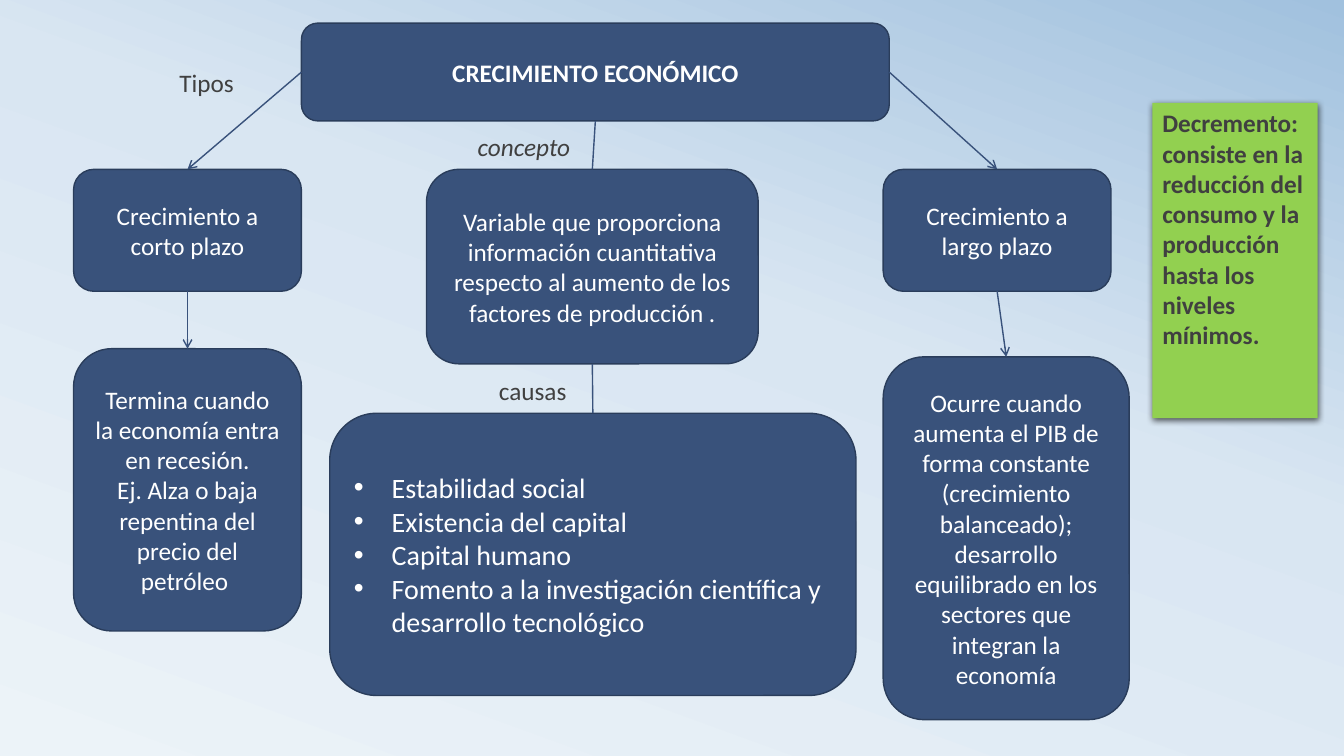
from copy import deepcopy
from dataclasses import dataclass

from lxml import etree
from pptx import Presentation
from pptx.dml.color import RGBColor
from pptx.enum.shapes import MSO_CONNECTOR, MSO_SHAPE
from pptx.enum.text import MSO_ANCHOR, MSO_AUTO_SIZE, PP_ALIGN
from pptx.oxml.ns import qn
from pptx.shapes.autoshape import Shape
from pptx.slide import Slide
from pptx.text.text import TextFrame
from pptx.util import Inches, Pt

ROUND, RECT = MSO_SHAPE.ROUNDED_RECTANGLE, MSO_SHAPE.RECTANGLE
STRAIGHT = MSO_CONNECTOR.STRAIGHT
TOP, MIDDLE = MSO_ANCHOR.TOP, MSO_ANCHOR.MIDDLE
LEFT, CENTER = PP_ALIGN.LEFT, PP_ALIGN.CENTER
FIXED = MSO_AUTO_SIZE.NONE
UP, WEST, DOWN, EAST = range(4)


@dataclass(frozen=True)
class Theme:
    font: str = "Calibri"
    size: int = 18
    large: int = 20
    card: str = "39527B"
    edge: str = "2A3D5B"
    light: str = "FFFFFF"
    dark: str = "404040"
    note: str = "92D050"
    shade: str = "000000"
    sky: tuple[tuple[float, str], ...] = (
        (0, "ECF3F8"), (0.58, "D9E6F2"), (1, "A1C1DE"))


@dataclass(frozen=True)
class Box:
    x: float
    y: float
    w: float
    h: float

    def inset(self, pad: float) -> "Box":
        return Box(self.x + pad, self.y + pad, self.w - 2 * pad, self.h - 2 * pad)

    def lengths(self) -> tuple[int, int, int, int]:
        return Inches(self.x), Inches(self.y), Inches(self.w), Inches(self.h)


@dataclass(frozen=True)
class Card:
    name: str
    box: Box
    lines: tuple[str, ...] = ()


@dataclass(frozen=True)
class Label:
    text: str
    box: Box
    slant: bool = False


@dataclass(frozen=True)
class Link:
    start: str
    side: int
    end: str
    arrow: bool = True


THEME = Theme()
ROW = 1.68
HEAD = "CRECIMIENTO ECONÓMICO"
CAUSES = (
    "Estabilidad social",
    "Existencia del capital",
    "Capital humano",
    "Fomento a la investigación científica y desarrollo tecnológico",
)
NOTE = ("Decremento: consiste en la reducción del consumo y la producción "
        "hasta los niveles mínimos.")
CARDS = (
    Card("head", Box(2.99, 0.23, 5.83, 0.97)),
    Card("short", Box(0.73, ROW, 2.26, 1.21), ("Crecimiento a corto plazo",)),
    Card("long", Box(8.76, ROW, 2.26, 1.21), ("Crecimiento a largo plazo",)),
    Card("concept", Box(4.23, ROW, 3.29, 1.93), (
        "Variable que proporciona información cuantitativa respecto al "
        "aumento de los factores de producción .",)),
    Card("causes", Box(3.27, 4.1, 5.22, 2.8)),
    Card("slump", Box(0.73, 3.46, 2.26, 2.8), (
        "Termina cuando la economía entra en recesión.",
        "Ej. Alza o baja repentina del precio del petróleo ")),
    Card("growth", Box(8.76, 3.54, 2.44, 3.6), (
        "Ocurre cuando aumenta el PIB de forma constante (crecimiento "
        "balanceado); desarrollo equilibrado en los sectores que integran "
        "la economía",)),
)
LABELS = (
    Label("concepto", Box(4.64, 1.28, 1.3, 0.4), True),
    Label("causas", Box(4.85, 3.7, 1.1, 0.4)),
    Label("Tipos", Box(1.68, 0.64, 1.11, 0.4)),
)
LINKS = (
    Link("head", WEST, "short"),
    Link("head", EAST, "long"),
    Link("head", DOWN, "concept", False),
    Link("concept", DOWN, "causes", False),
    Link("short", DOWN, "slump"),
    Link("long", DOWN, "growth"),
)


def tint(code: str) -> RGBColor:
    return RGBColor.from_string(code)


def write(frame: TextFrame, lines: tuple[str, ...], color: str,
          align: PP_ALIGN = LEFT, anchor: MSO_ANCHOR = TOP,
          size: int = THEME.size, bold: bool = False,
          slant: bool = False, pitch: float = 1.0) -> None:
    frame.word_wrap = True
    frame.auto_size = FIXED
    frame.vertical_anchor = anchor
    for index, line in enumerate(lines):
        para = frame.add_paragraph() if index else frame.paragraphs[0]
        para.alignment = align
        para.line_spacing = pitch
        para.space_before = Pt(0)
        run = para.add_run()
        run.text = line
        font = run.font
        font.name, font.size = THEME.font, Pt(size)
        font.bold, font.italic = bold, slant
        font.color.rgb = tint(color)


def paint(slide: Slide) -> None:
    fill = slide.background.fill
    fill.gradient()
    fill.gradient_angle = 70
    first = slide.element.find(".//" + qn("a:gs"))
    first.addnext(deepcopy(first))
    for stop, (place, color) in zip(fill.gradient_stops, THEME.sky):
        stop.position = place
        stop.color.rgb = tint(color)


def block(slide: Slide, kind: MSO_SHAPE, box: Box, color: str) -> Shape:
    shape = slide.shapes.add_shape(kind, *box.lengths())
    shape.shadow.inherit = False
    shape.fill.solid()
    shape.fill.fore_color.rgb = tint(color)
    return shape


def draw_card(slide: Slide, card: Card) -> Shape:
    shape = block(slide, ROUND, card.box, THEME.card)
    shape.line.color.rgb = tint(THEME.edge)
    shape.line.width = Pt(1)
    if card.lines:
        write(shape.text_frame, card.lines, THEME.light, CENTER, MIDDLE)
    return shape


def seat(holder: Shape, card: Shape, box: Box) -> None:
    holder.left, holder.top, holder.width, holder.height = box.lengths()
    card.element.addnext(holder.element)


def draw_label(slide: Slide, label: Label) -> None:
    frame = slide.shapes.add_textbox(*label.box.lengths()).text_frame
    write(frame, (label.text,), THEME.dark, slant=label.slant, pitch=0.95)


def draw_link(slide: Slide, link: Link, cards: dict[str, Shape]) -> None:
    line = slide.shapes.add_connector(STRAIGHT, 0, 0, 0, 0)
    line.begin_connect(cards[link.start], link.side)
    line.end_connect(cards[link.end], UP)
    line.line.color.rgb = tint(THEME.card)
    line.line.width = Pt(1)
    props = line.element.spPr
    if link.arrow:
        etree.SubElement(props.find(qn("a:ln")), qn("a:tailEnd"), type="arrow")
    etree.SubElement(props, qn("a:effectLst"))


def draw_note(slide: Slide) -> None:
    shape = block(slide, RECT, Box(11.43, 1.02, 1.64, 3.13), THEME.note)
    shape.line.fill.background()
    effect = shape.element.spPr.find(qn("a:effectLst"))
    shade = etree.SubElement(effect, qn("a:outerShdw"), blurRad=str(Pt(4.5)),
                             dist=str(Pt(1.5)), dir="5400000", rotWithShape="0")
    color = etree.SubElement(shade, qn("a:srgbClr"), val=THEME.shade)
    etree.SubElement(color, qn("a:alpha"), val="63000")
    write(shape.text_frame, (NOTE,), THEME.dark, bold=True)


def main() -> None:
    deck = Presentation()
    deck.slide_width, deck.slide_height = Inches(13.33), Inches(7.5)
    slide = deck.slides.add_slide(deck.slide_layouts[1])
    paint(slide)
    cards = {card.name: draw_card(slide, card) for card in CARDS}
    boxes = {card.name: card.box for card in CARDS}
    title, body = slide.shapes.title, slide.placeholders[1]
    seat(title, cards["head"], boxes["head"].inset(0.05))
    write(title.text_frame, (HEAD,), THEME.light, CENTER, MIDDLE, bold=True)
    seat(body, cards["causes"], boxes["causes"].inset(0.14))
    write(body.text_frame, CAUSES, THEME.light, LEFT, MIDDLE, THEME.large)
    for link in LINKS:
        draw_link(slide, link, cards)
    for label in LABELS:
        draw_label(slide, label)
    draw_note(slide)
    deck.save("out.pptx")


if __name__ == "__main__":
    main()
